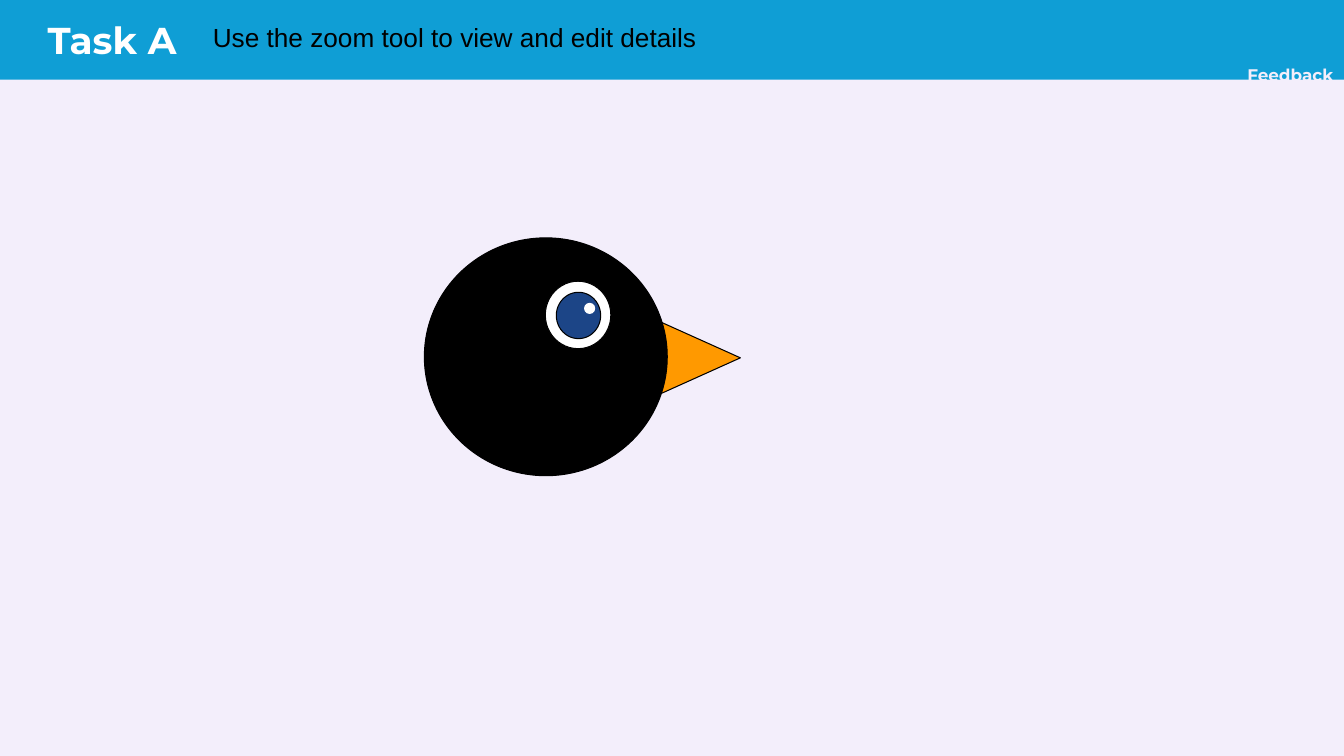
from pptx import Presentation
from pptx.dml.color import RGBColor
from pptx.enum.shapes import MSO_SHAPE
from pptx.enum.text import MSO_ANCHOR, MSO_AUTO_SIZE, PP_ALIGN
from pptx.util import Pt

RECTANGLE, OVAL, TRIANGLE = MSO_SHAPE.RECTANGLE, MSO_SHAPE.OVAL, MSO_SHAPE.ISOSCELES_TRIANGLE
TOP, BOTTOM = MSO_ANCHOR.TOP, MSO_ANCHOR.BOTTOM
LEFT, CENTER = PP_ALIGN.LEFT, PP_ALIGN.CENTER
NO_AUTOFIT = MSO_AUTO_SIZE.NONE
TITLE_ONLY = 5

SLIDE_WIDTH, SLIDE_HEIGHT = 960, 540
COLORS = {
    "background": "F3EEFB",
    "header": "0F9ED5",
    "black": "000000",
    "white": "FFFFFF",
    "beak": "FF9900",
    "iris": "1C4587",
}


def rgb(name):
    return RGBColor.from_string(COLORS[name])


def add_filled(shapes, kind, box, fill, line=None):
    shape = shapes.add_shape(kind, *map(Pt, box))
    shape.shadow.inherit = False
    shape.fill.solid()
    shape.fill.fore_color.rgb = rgb(fill)
    if line:
        shape.line.color.rgb = rgb(line)
        shape.line.width = Pt(0.75)
    else:
        shape.line.fill.background()
    return shape


def write_text(holder, text, color, font, anchor=TOP, align=LEFT):
    frame = holder.text_frame
    frame.text = text
    frame_format = {
        "margin_left": 0, "margin_top": 0, "margin_right": 0, "margin_bottom": 0,
        "word_wrap": True, "auto_size": NO_AUTOFIT, "vertical_anchor": anchor,
    }
    for name, value in frame_format.items():
        setattr(frame, name, value)
    paragraph = frame.paragraphs[0]
    paragraph.alignment = align
    for name, value in font.items():
        setattr(paragraph.font, name, value)
    paragraph.font.color.rgb = rgb(color)


def add_header(slide, left, top, width, height):
    add_filled(slide.shapes, RECTANGLE, (left, top, width, height), "header")

    feedback = slide.shapes.add_textbox(Pt(left + width - 70), Pt(top + 46), Pt(63.4), Pt(14.4))
    write_text(feedback, "Feedback", "background",
               {"name": "Montserrat", "size": Pt(12), "bold": True}, align=CENTER)

    task = slide.shapes.add_textbox(Pt(left + 34), Pt(top + 4.3), Pt(138), Pt(40.3))
    write_text(task, "Task A", "white",
               {"name": "Montserrat", "size": Pt(26.7), "bold": True}, anchor=BOTTOM)

    instruction = slide.shapes.title
    place = {"left": 152 + left, "top": 15.1 + top, "width": 602.6, "height": 28.8}
    for name, value in place.items():
        setattr(instruction, name, Pt(value))
    write_text(instruction, "Use the zoom tool to view and edit details", "black",
               {"name": "Arial", "size": Pt(18.7), "bold": False})


def add_bird(slide, left, top):
    bird = slide.shapes.add_group_shape().shapes
    beak = add_filled(bird, TRIANGLE, (left + 164.2, top + 53.3, 58.3, 64.8), "beak", "black")
    beak.rotation = 90
    head_and_eye = [
        ((0, 0, 173.5, 169.9), "black", "black"),
        ((86.4, 31, 46.8, 48.2), "white", "black"),
        ((94.3, 38.9, 31.7, 33.1), "iris", "black"),
        ((114.5, 46.8, 7.2, 7.2), "white", "white"),
    ]
    for (x, y, width, height), fill, line in head_and_eye:
        add_filled(bird, OVAL, (left + x, top + y, width, height), fill, line)


def main():
    presentation = Presentation()
    presentation.slide_width = Pt(SLIDE_WIDTH)
    presentation.slide_height = Pt(SLIDE_HEIGHT)
    slide = presentation.slides.add_slide(presentation.slide_layouts[TITLE_ONLY])
    slide.background.fill.solid()
    slide.background.fill.fore_color.rgb = rgb("background")
    add_header(slide, 0, 0, SLIDE_WIDTH, 56.9)
    add_bird(slide, 303.1, 169.9)
    # The title placeholder comes first in the tree, so the header bar must go behind it.
    tree = slide.shapes.title.element.getparent()
    tree.insert(tree.index(slide.shapes[1].element) + 1, slide.shapes.title.element)
    presentation.save("out.pptx")


if __name__ == "__main__":
    main()
